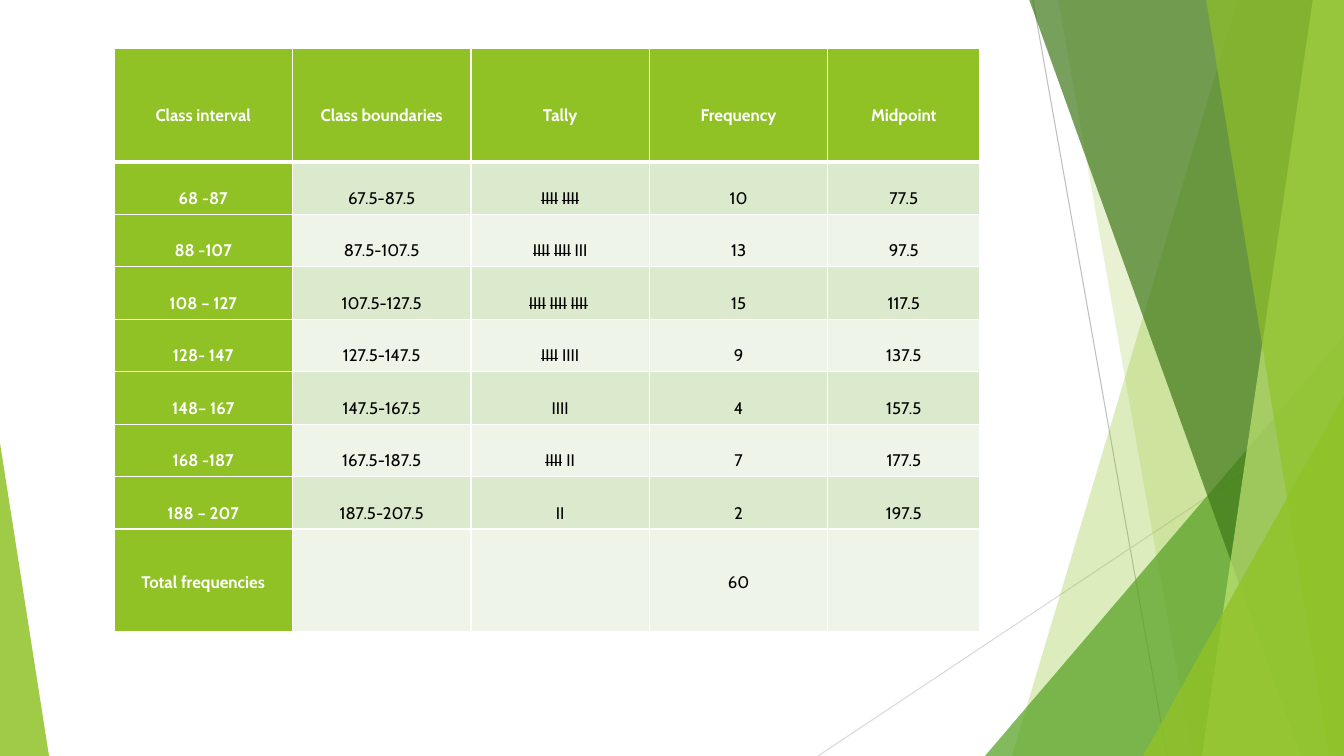
from lxml import etree
from pptx import Presentation
from pptx.dml.color import RGBColor
from pptx.enum.shapes import MSO_CONNECTOR, MSO_SHAPE
from pptx.enum.text import MSO_ANCHOR, PP_ALIGN
from pptx.oxml.ns import qn
from pptx.util import Pt

STRAIGHT = MSO_CONNECTOR.STRAIGHT
TRIANGLE = MSO_SHAPE.ISOSCELES_TRIANGLE
MIDDLE = MSO_ANCHOR.MIDDLE
CENTER = PP_ALIGN.CENTER

# Content: tally groups between ~ marks are struck through
HEADERS = ["Class interval", "Class boundaries", "Tally", "Frequency", "Midpoint"]
CLASSES = [
    ["68 -87", "67.5-87.5", "~IIII~ ~IIII~", "10", "77.5"],
    ["88 -107", "87.5-107.5", "~IIII~ ~IIII~ III", "13", "97.5"],
    ["108 – 127", "107.5-127.5", "~IIII~ ~IIII~ ~IIII~ ", "15", "117.5"],
    ["128- 147", "127.5-147.5", "~IIII~ IIII", "9", "137.5"],
    ["148– 167", "147.5-167.5", "IIII", "4", "157.5"],
    ["168 -187", "167.5-187.5", "~IIII~ II", "7", "177.5"],
    ["188 – 207", "187.5-207.5", "II", "2", "197.5"],
]
TOTALS = ["Total frequencies", "", "", "60", ""]

COLORS = {
    "white": "FFFFFF", "black": "000000", "lime": "90C226", "leaf": "54A021",
    "forest": "3F7819", "pale": "C0E474", "band": "DBE9CD", "light_band": "EEF4E8",
    "gray": "BFBFBF", "light_gray": "D9D9D9",
}

# Decoration: hairlines, bands running to the right edge, corner triangles
HAIRLINES = [(1033, 0, 1167, 756, "gray"), (1344, 406, 818, 756, "light_gray")]
BACK_BANDS = [(1238, 1012, "lime", 30), (1058, 1192, "lime", 20)]  # top x, bottom x
FRONT_BANDS = [(1029, 1301, "forest", 70), (1313, 1202, "pale", 70),
               (1206, 1329, "lime", 65)]
BACK_TRIANGLES = [(985, 336, 359, 420, 1, "leaf", 72)]
FRONT_TRIANGLES = [(1143, 396, 201, 360, 1, "lime", 80),
                   (0, 443, 49, 313, 0, "lime", 85)]

# Layout in px
PX = 914400 / 100.8
PAGE_W, PAGE_H = 1344, 756
TABLE_X, TABLE_Y = 114, 48
WIDE_COLUMNS, LAST_COLUMN = 714, 152
HEADER_H, CLASSES_H, TOTALS_H = 114, 367, 103
SIDE_MARGIN = 7


def emu(px):
    return round(px * PX)


def rgb(name):
    return RGBColor.from_string(COLORS[name])


def paint(shape, color, opacity):
    shape.shadow.inherit = False
    shape.line.fill.background()
    shape.fill.solid()
    shape.fill.fore_color.rgb = rgb(color)
    tint = shape.fill._xPr.find(".//" + qn("a:srgbClr"))
    etree.SubElement(tint, qn("a:alpha"), val=str(opacity * 1000))


def add_hairline(page, x1, y1, x2, y2, color):
    line = page.shapes.add_connector(STRAIGHT, emu(x1), emu(y1), emu(x2), emu(y2))
    line.line.color.rgb = rgb(color)
    line.line.width = Pt(0.75)
    etree.SubElement(line._element.spPr, qn("a:effectLst"))


def add_band(page, top_x, bottom_x, color, opacity):
    outline = page.shapes.build_freeform(top_x, -1, scale=PX)
    outline.add_line_segments([(PAGE_W, -1), (PAGE_W, PAGE_H), (bottom_x, PAGE_H)])
    paint(outline.convert_to_shape(), color, opacity)


def add_triangle(page, x, y, width, height, apex, color, opacity):
    shape = page.shapes.add_shape(TRIANGLE, emu(x), emu(y), emu(width), emu(height))
    shape.adjustments[0] = apex
    paint(shape, color, opacity)


def add_borders(cell, weights):
    properties = cell._tc.get_or_add_tcPr()
    for side, weight in weights.items():
        border = etree.SubElement(properties, qn("a:ln" + side), w=str(Pt(weight)))
        fill = etree.SubElement(border, qn("a:solidFill"))
        etree.SubElement(fill, qn("a:srgbClr"), val=COLORS["white"])


def write_cell(cell, text, spacing, font):
    cell.vertical_anchor = MIDDLE
    cell.margin_left = cell.margin_right = emu(SIDE_MARGIN)
    cell.margin_top = cell.margin_bottom = 0
    para = cell.text_frame.paragraphs[0]
    para.alignment = CENTER
    para.line_spacing = spacing
    for index, part in enumerate(text.split("~")):
        if not part:
            continue
        span = para.add_run()
        span.text = part
        for name, value in font.items():
            setattr(span.font, name, value)
        if index % 2:
            span._r.get_or_add_rPr().set("strike", "sngStrike")


def add_frequency_table(page):
    rows = [HEADERS, *CLASSES, TOTALS]
    widths = [WIDE_COLUMNS / 4] * 4 + [LAST_COLUMN]
    heights = [HEADER_H] + [CLASSES_H / len(CLASSES)] * len(CLASSES) + [TOTALS_H]
    table = page.shapes.add_table(
        len(rows), len(widths), emu(TABLE_X), emu(TABLE_Y),
        emu(sum(widths)), emu(sum(heights))).table
    table.horz_banding = False
    for column, width in zip(table.columns, widths):
        column.width = emu(width)
    for row, height in zip(table.rows, heights):
        row.height = emu(height)

    for r, texts in enumerate(rows):
        for c, text in enumerate(texts):
            cell = table.cell(r, c)
            heading = r == 0 or c == 0
            add_borders(cell, {"L": 1, "R": 1, "T": 3 if r == 1 else 1,
                               "B": 3 if r == 0 else 1})
            fill = "lime" if heading else "band" if r % 2 else "light_band"
            cell.fill.solid()
            cell.fill.fore_color.rgb = rgb(fill)
            font = {"name": "Cabin", "size": Pt(12), "bold": heading}
            write_cell(cell, text, 1.15 if texts is TOTALS else 2.0, font)
            for span in cell.text_frame.paragraphs[0].runs:
                span.font.color.rgb = rgb("white" if heading else "black")


def main():
    deck = Presentation()
    deck.slide_width, deck.slide_height = emu(PAGE_W), emu(PAGE_H)
    page = deck.slides.add_slide(deck.slide_layouts[6])

    # Decoration, back to front
    for add, items in [(add_hairline, HAIRLINES), (add_band, BACK_BANDS),
                       (add_triangle, BACK_TRIANGLES), (add_band, FRONT_BANDS),
                       (add_triangle, FRONT_TRIANGLES)]:
        for item in items:
            add(page, *item)

    # Frequency distribution
    add_frequency_table(page)
    deck.save("out.pptx")


if __name__ == "__main__":
    main()
